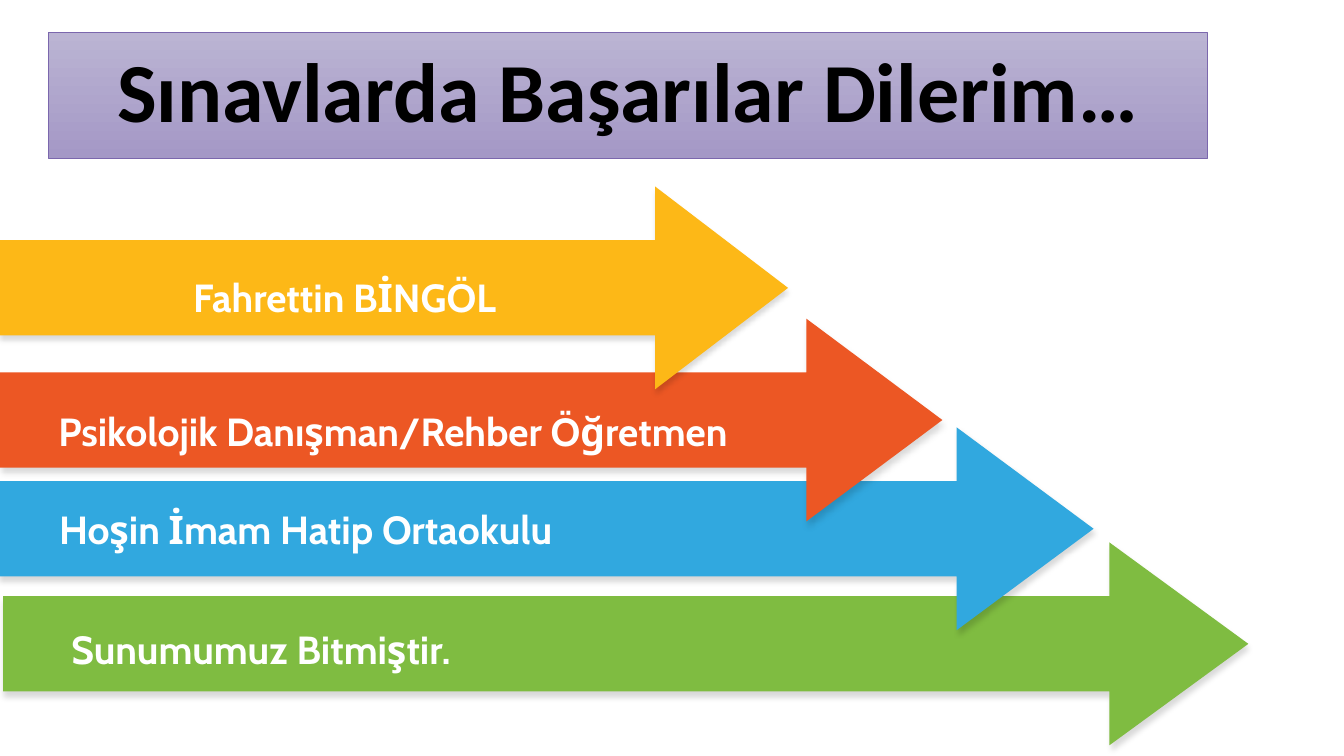
from dataclasses import dataclass

from lxml import etree
from pptx import Presentation, util as u
from pptx.dml.color import RGBColor
from pptx.enum import shapes, text
from pptx.oxml.ns import qn


@dataclass(frozen=True)
class Theme:
    title_font: str = "Calibri"
    body_font: str = "Cabin"
    title_size: int = 60
    body_size: int = 28
    black: str = "000000"
    white: str = "FFFFFF"
    title_fill: tuple = ("BBB4D3", "A498C6")
    title_line: str = "7B67AD"
    green: str = "7FBC41"
    blue: str = "31A8DF"
    red: str = "EC5724"
    yellow: str = "FDB817"


THEME = Theme()
ARROW_HEIGHT = 5.11
SHAFT_RATIO = 0.47
LABEL_HEIGHT = 1.45

# left, top, width, head, colour, label, label dx, label dy, label width
ARROWS = [
    (0.08, 13.67, 31.38, 3.5, THEME.green, "Sunumumuz Bitmiştir.", 1.47, 1.95, 15.77),
    (0, 10.77, 27.56, 3.45, THEME.blue, "Hoşin İmam Hatip Ortaokulu", 1.24, 1.83, 14.58),
    (0, 8.03, 23.75, 3.43, THEME.red, "Psikolojik Danışman/Rehber Öğretmen", 1.22, 2.1, 20.55),
    (0, 4.7, 19.86, 3.35, THEME.yellow, "Fahrettin BİNGÖL", 4.62, 2.06, 11.2),
]


def set_all(target, values):
    for name, value in values.items():
        setattr(target, name, value)


def write(tf, words, font, size, colour):
    p = tf.paragraphs[0]
    r = p.add_run()
    r.text = words
    set_all(r.font, {"name": font, "size": u.Pt(size), "bold": True})
    r.font.color.rgb = RGBColor.from_string(colour)
    return p


def add_shadow(sp):
    sp.shadow.inherit = False
    effects = sp._element.spPr.find(qn("a:effectLst"))
    shadow = etree.SubElement(effects, qn("a:outerShdw"), {
        "blurRad": str(u.Pt(4)), "dist": str(u.Pt(3)),
        "dir": "5400000", "algn": "t", "rotWithShape": "0"})
    colour = etree.SubElement(shadow, qn("a:srgbClr"), val=THEME.black)
    etree.SubElement(colour, qn("a:alpha"), val="15000")


def title_banner(s, left, top, width, height):
    sp = s.shapes.title
    set_all(sp, {"left": u.Cm(left), "top": u.Cm(top),
                 "width": u.Cm(width), "height": u.Cm(height)})
    sp.fill.gradient()
    sp.fill.gradient_angle = 270
    for stop, colour in zip(sp.fill.gradient_stops, THEME.title_fill):
        stop.color.rgb = RGBColor.from_string(colour)
    sp.line.color.rgb = RGBColor.from_string(THEME.title_line)
    sp.line.width = u.Pt(0.5)
    tf = sp.text_frame
    set_all(tf, {"word_wrap": True, "auto_size": text.MSO_AUTO_SIZE.NONE,
                 "vertical_anchor": text.MSO_ANCHOR.MIDDLE})
    p = write(tf, "Sınavlarda Başarılar Dilerim…",
              THEME.title_font, THEME.title_size, THEME.black)
    set_all(p, {"alignment": text.PP_ALIGN.CENTER, "line_spacing": 0.9})


def arrow(s, left, top, width, height, head, colour):
    sp = s.shapes.add_shape(shapes.MSO_SHAPE.RIGHT_ARROW, u.Cm(left), u.Cm(top),
                            u.Cm(width), u.Cm(height))
    sp.adjustments[0] = SHAFT_RATIO
    sp.adjustments[1] = head / height
    sp.fill.solid()
    sp.fill.fore_color.rgb = RGBColor.from_string(colour)
    sp.line.fill.background()
    add_shadow(sp)


def label(s, left, top, width, height, words):
    sp = s.shapes.add_textbox(u.Cm(left), u.Cm(top), u.Cm(width), u.Cm(height))
    tf = sp.text_frame
    set_all(tf, {"word_wrap": True, "auto_size": text.MSO_AUTO_SIZE.SHAPE_TO_FIT_TEXT})
    write(tf, words, THEME.body_font, THEME.body_size, THEME.white)


def closing_slide(prs):
    s = prs.slides.add_slide(prs.slide_layouts.get_by_name("Title Only"))
    title_banner(s, 1.22, 0.81, 29.21, 3.18)
    for left, top, width, head, colour, *_ in ARROWS:
        arrow(s, left, top, width, ARROW_HEIGHT, head, colour)
    for left, top, *_, words, dx, dy, width in reversed(ARROWS):
        label(s, left + dx, top + dy, width, LABEL_HEIGHT, words)


def main():
    prs = Presentation()
    set_all(prs, {"slide_width": u.Cm(33.87), "slide_height": u.Cm(19.05)})
    closing_slide(prs)
    prs.save("out.pptx")


if __name__ == "__main__":
    main()
